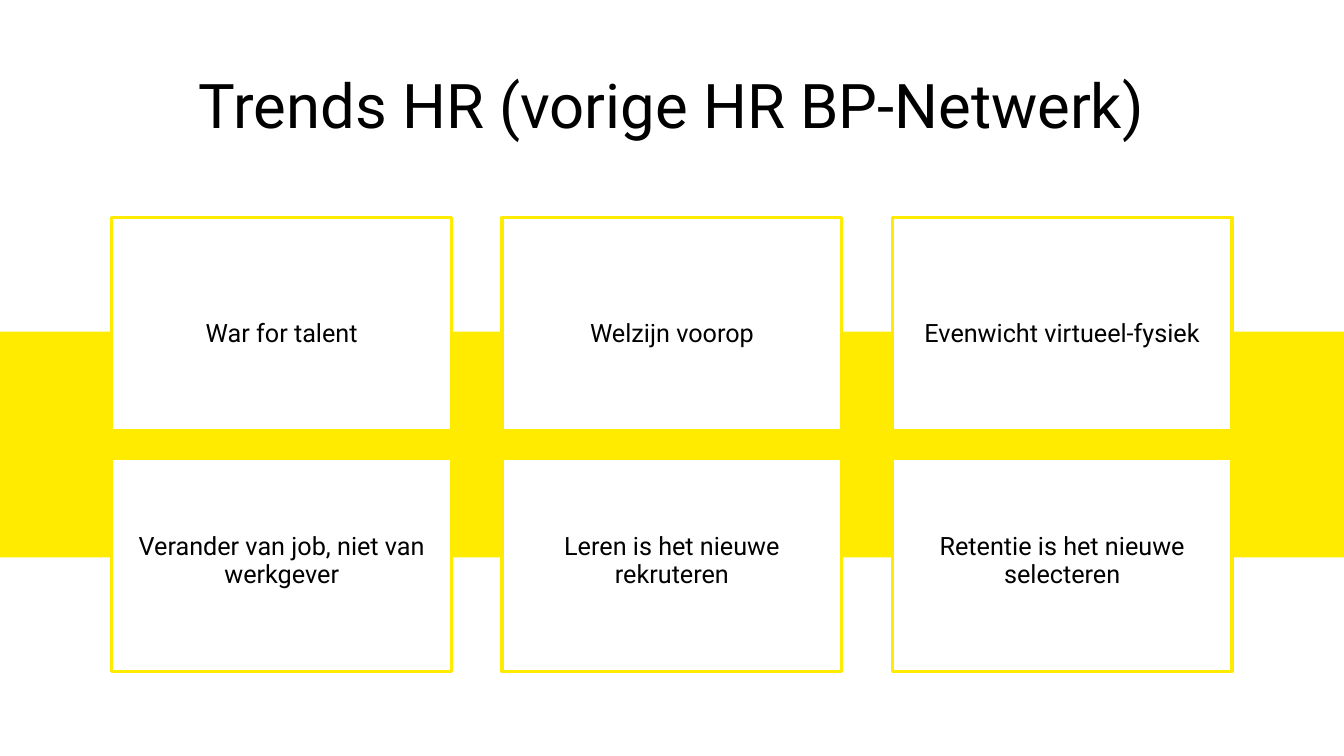
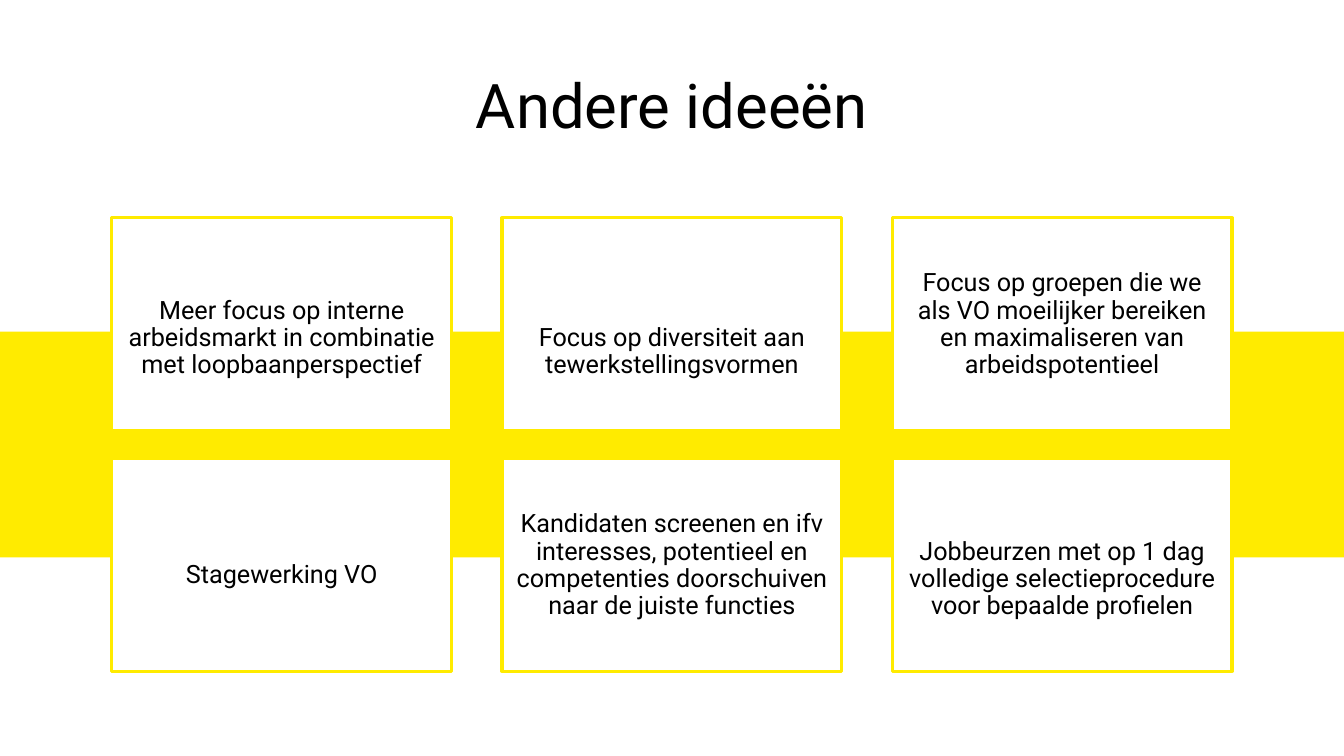
from pptx import Presentation
from pptx.dml.color import RGBColor
from pptx.enum import shapes, text
from pptx.util import Inches, Pt

# Content: title, then cards row by row as (wording, free lines below it)
SLIDES = [
    ("Trends HR (vorige HR BP-Netwerk)", [
        ("War for talent", 2),
        ("Welzijn voorop", 2),
        ("Evenwicht virtueel-fysiek", 2),
        ("Verander van job, niet van werkgever", 2),
        ("Leren is het nieuwe rekruteren", 2),
        ("Retentie is het nieuwe selecteren", 2),
    ]),
    ("Andere ideeën", [
        ("Meer focus op interne arbeidsmarkt in combinatie met loopbaanperspectief", 1),
        ("Focus op diversiteit aan tewerkstellingsvormen", 1),
        ("Focus op groepen die we als VO moeilijker bereiken en maximaliseren "
         "van arbeidspotentieel", 1),
        ("Stagewerking VO", 2),
        ("Kandidaten screenen en ifv interesses, potentieel en competenties "
         "doorschuiven naar de juiste functies", 1),
        ("Jobbeurzen met op 1 dag volledige selectieprocedure voor bepaalde profielen", 1),
    ]),
]

# Shared style, lengths in inches
COLOURS = {"yellow": "FFEB00", "white": "FFFFFF", "black": "000000"}
FONT = "Roboto"
WIDTH, HEIGHT = 13.33, 7.5
COLUMNS, ROWS = 3, 2
CARD_W, CARD_H = 3.37, 2.11
GAP_X, GAP_Y = 0.5, 0.28
GRID_TOP = 2.16
GRID_LEFT = (WIDTH - COLUMNS * CARD_W - (COLUMNS - 1) * GAP_X) / 2
GRID_MIDDLE = GRID_TOP + (ROWS * CARD_H + (ROWS - 1) * GAP_Y) / 2
BAND_H = 2.24
TITLE_BOX = (0.41, 0.47, WIDTH - 2 * 0.41, 1.33)
FREE_LINE = 0.31


def colour(name):
    return RGBColor.from_string(COLOURS[name])


def write(shape, wording, size, spacing, anchor, insets=(0, 0, 0, 0)):
    frame = shape.text_frame
    frame.word_wrap = True
    frame.vertical_anchor = anchor
    (frame.margin_left, frame.margin_top,
     frame.margin_right, frame.margin_bottom) = map(Inches, insets)
    frame.text = wording
    paragraph = frame.paragraphs[0]
    paragraph.alignment = text.PP_ALIGN.CENTER
    paragraph.line_spacing = spacing
    font = paragraph.runs[0].font
    font.name, font.size = FONT, Pt(size)
    font.color.rgb = colour("black")


def add_box(slide, box, fill, line=None):
    shape = slide.shapes.add_shape(shapes.MSO_SHAPE.RECTANGLE, *map(Inches, box))
    shape.shadow.inherit = False
    shape.fill.solid()
    shape.fill.fore_color.rgb = colour(fill)
    if line:
        shape.line.color.rgb = colour(line)
        shape.line.width = Pt(2.25)
    else:
        shape.line.fill.background()
    return shape


def add_base(deck, heading):
    slide = deck.slides.add_slide(deck.slide_layouts[6])
    add_box(slide, (0, GRID_MIDDLE - BAND_H / 2, WIDTH, BAND_H), "yellow")
    title = slide.shapes.add_textbox(*map(Inches, TITLE_BOX))
    write(title, heading, 44, Pt(38), text.MSO_ANCHOR.MIDDLE)
    return slide


def add_cards(slide, cards):
    for index, (wording, free_lines) in enumerate(cards):
        row, column = divmod(index, COLUMNS)
        left = GRID_LEFT + column * (CARD_W + GAP_X)
        top = GRID_TOP + row * (CARD_H + GAP_Y)
        card = add_box(slide, (left, top, CARD_W, CARD_H), "white", "yellow")
        write(card, wording, 18, 0.9, text.MSO_ANCHOR.BOTTOM,
              (0.12, 0, 0.12, 0.2 + free_lines * FREE_LINE))


def main():
    deck = Presentation()
    deck.slide_width, deck.slide_height = Inches(WIDTH), Inches(HEIGHT)
    for heading, cards in SLIDES:
        add_cards(add_base(deck, heading), cards)
    deck.save("out.pptx")


if __name__ == "__main__":
    main()
